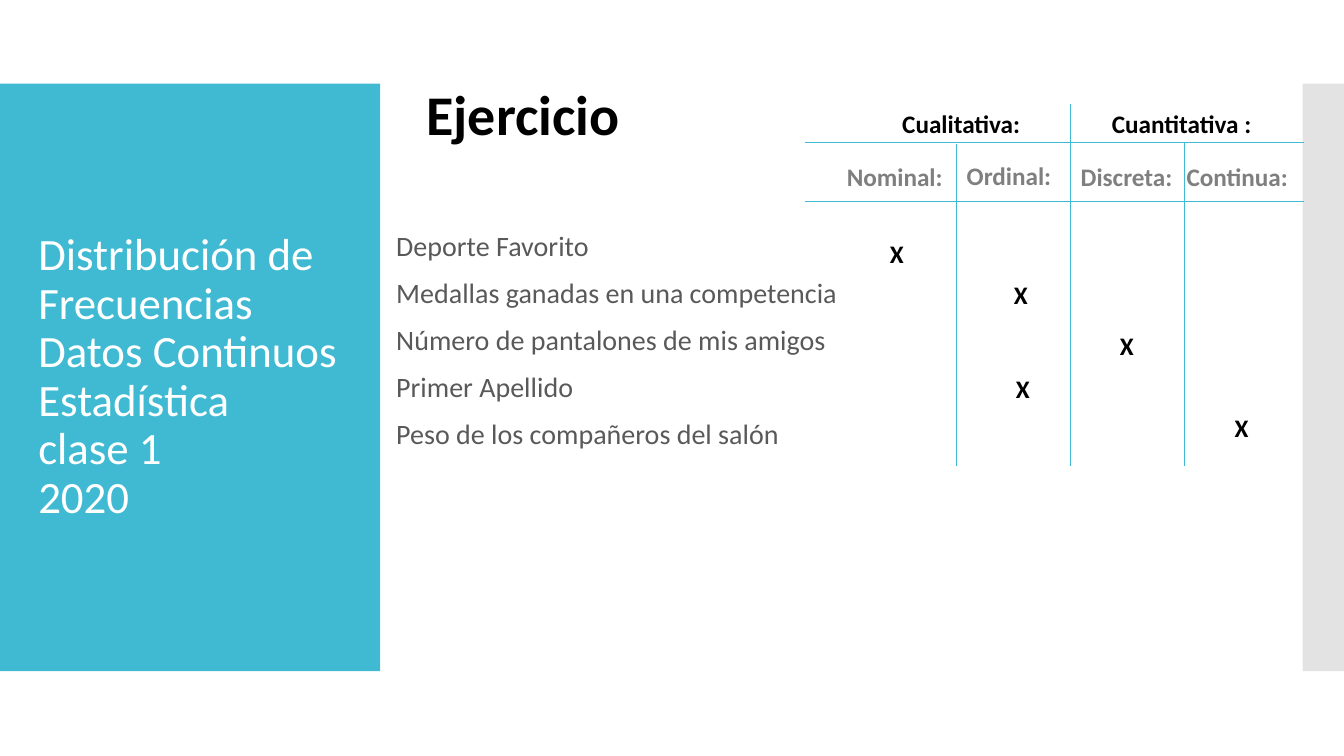
"""Build the exercise slide that sorts variables by type."""
from dataclasses import dataclass

from lxml import etree
from pptx import Presentation
from pptx import util as u
from pptx.dml import color
from pptx.enum import shapes, text
from pptx.oxml import ns

PX = 9144
HUES = {"teal": "40BAD2", "side": "C8C8C8", "white": "FFFFFF",
        "body": "595959", "black": "000000", "grey": "7F7F7F"}


@dataclass
class Panel:
    left: int
    width: int
    hue: str
    alpha: int = 100


@dataclass
class Label:
    words: str
    left: int
    top: int
    width: int
    hue: str = "black"
    size: int = 18
    height: int = 40
    align: text.PP_ALIGN = text.PP_ALIGN.LEFT


@dataclass
class Rule:
    x1: int
    y1: int
    x2: int
    y2: int


PANELS = [Panel(0, 377, "teal"), Panel(1292, 42, "side", 50)]
TITLE = ("Distribución de Frecuencias Datos Continuos",
         "Estadística", "clase 1 ", "2020")
ITEMS = ("Deporte Favorito", "Medallas ganadas en una competencia",
         "Número de pantalones de mis amigos", "Primer Apellido",
         "Peso de los compañeros del salón")
LABELS = [
    Label("Ejercicio", 413, 74, 322, size=40, height=77),
    Label("Cualitativa:", 885, 103, 146),
    Label("Nominal:", 830, 155, 128, "grey"),
    Label("Ordinal:", 949, 154, 114, "grey"),
    Label("Cuantitativa :", 1093, 103, 173),
    Label("Discreta:", 1062, 155, 123, "grey"),
    Label("Continua:", 1167, 155, 132, "grey"),
]
MARKS = [(861, 232), (984, 272), (1089, 323), (986, 365), (1203, 404)]
RULES = ([Rule(798, y, 1293, y) for y in (141, 200)]
         + [Rule(x, y, x, 462) for x, y in ((949, 143), (1062, 103), (1175, 141))])


def px(*sizes: int) -> list[u.Emu]:
    """Turn px lengths into EMU."""
    return [u.Emu(size * PX) for size in sizes]


def rgb(hue: str) -> color.RGBColor:
    """Look up a named colour."""
    return color.RGBColor.from_string(HUES[hue])


def put(item, **values) -> None:
    """Set each given value on an item."""
    for name, value in values.items():
        setattr(item, name, value)


def place(shape, left: int, top: int, width: int, height: int) -> None:
    """Move and size a shape in px."""
    sides = ("left", "top", "width", "height")
    put(shape, **dict(zip(sides, px(left, top, width, height))))


def style(frame, size: int, hue: str, bold: bool, **form) -> None:
    """Format every paragraph and run of a text frame."""
    for para in frame.paragraphs:
        put(para, **form)
        for run in para.runs:
            put(run.font, name="Calibri", size=u.Pt(size), bold=bold)
            run.font.color.rgb = rgb(hue)


def draw_panel(slide, panel: Panel) -> None:
    """Draw a side panel behind the title."""
    shape = slide.shapes.add_shape(shapes.MSO_SHAPE.RECTANGLE,
                                   *px(panel.left, 83, panel.width, 583))
    shape.shadow.inherit = False
    shape.fill.solid()
    shape.fill.fore_color.rgb = rgb(panel.hue)
    shape.line.fill.background()
    if panel.alpha < 100:
        tint = shape.element.spPr.find(".//" + ns.qn("a:srgbClr"))
        etree.SubElement(tint, ns.qn("a:alpha"), val=str(panel.alpha * 1000))
    slide.shapes.title.element.addprevious(shape.element)


def draw_label(slide, label: Label) -> None:
    """Draw a bold text box."""
    box = slide.shapes.add_textbox(
        *px(label.left, label.top, label.width, label.height))
    put(box.text_frame, word_wrap=True, text=label.words,
        auto_size=text.MSO_AUTO_SIZE.SHAPE_TO_FIT_TEXT)
    style(box.text_frame, label.size, label.hue, True, alignment=label.align)


def draw_rule(slide, rule: Rule) -> None:
    """Draw a thin grid line."""
    line = slide.shapes.add_connector(shapes.MSO_CONNECTOR.STRAIGHT,
                                      *px(rule.x1, rule.y1, rule.x2, rule.y2))
    line.line.color.rgb = rgb("teal")
    line.line.width = u.Pt(0.75)
    etree.SubElement(line.element.spPr, ns.qn("a:effectLst"))


def fill_title(title) -> None:
    """Write the title on the left panel."""
    place(title, 28, 123, 322, 503)
    put(title.text_frame, text="\v".join(TITLE), word_wrap=True,
        auto_size=text.MSO_AUTO_SIZE.NONE,
        vertical_anchor=text.MSO_ANCHOR.MIDDLE)
    style(title.text_frame, 32, "white", False,
          alignment=text.PP_ALIGN.LEFT, line_spacing=0.9)


def fill_list(body) -> None:
    """Write the list of variables without bullets."""
    place(body, 383, 225, 474, 237)
    frame = body.text_frame
    put(frame, text="\n".join(ITEMS), word_wrap=True,
        auto_size=text.MSO_AUTO_SIZE.NONE, vertical_anchor=text.MSO_ANCHOR.TOP)
    style(frame, 20, "body", False, line_spacing=0.9, space_before=u.Pt(12))
    frame.paragraphs[0].space_before = u.Pt(0)
    for para in frame.paragraphs:
        props = para._p.get_or_add_pPr()
        props.set("marL", "0")
        props.set("indent", "0")
        etree.SubElement(props, ns.qn("a:buNone"))


def main() -> None:
    """Build and save the slide."""
    deck = Presentation()
    deck.slide_width, deck.slide_height = px(1333, 750)
    slide = deck.slides.add_slide(deck.slide_layouts[1])
    for panel in PANELS:
        draw_panel(slide, panel)
    fill_title(slide.shapes.title)
    fill_list(slide.placeholders[1])
    for label in LABELS:
        draw_label(slide, label)
    for rule in RULES:
        draw_rule(slide, rule)
    for left, top in MARKS:
        draw_label(slide, Label("X", left, top, 57, align=text.PP_ALIGN.CENTER))
    deck.save("out.pptx")


if __name__ == "__main__":
    main()
